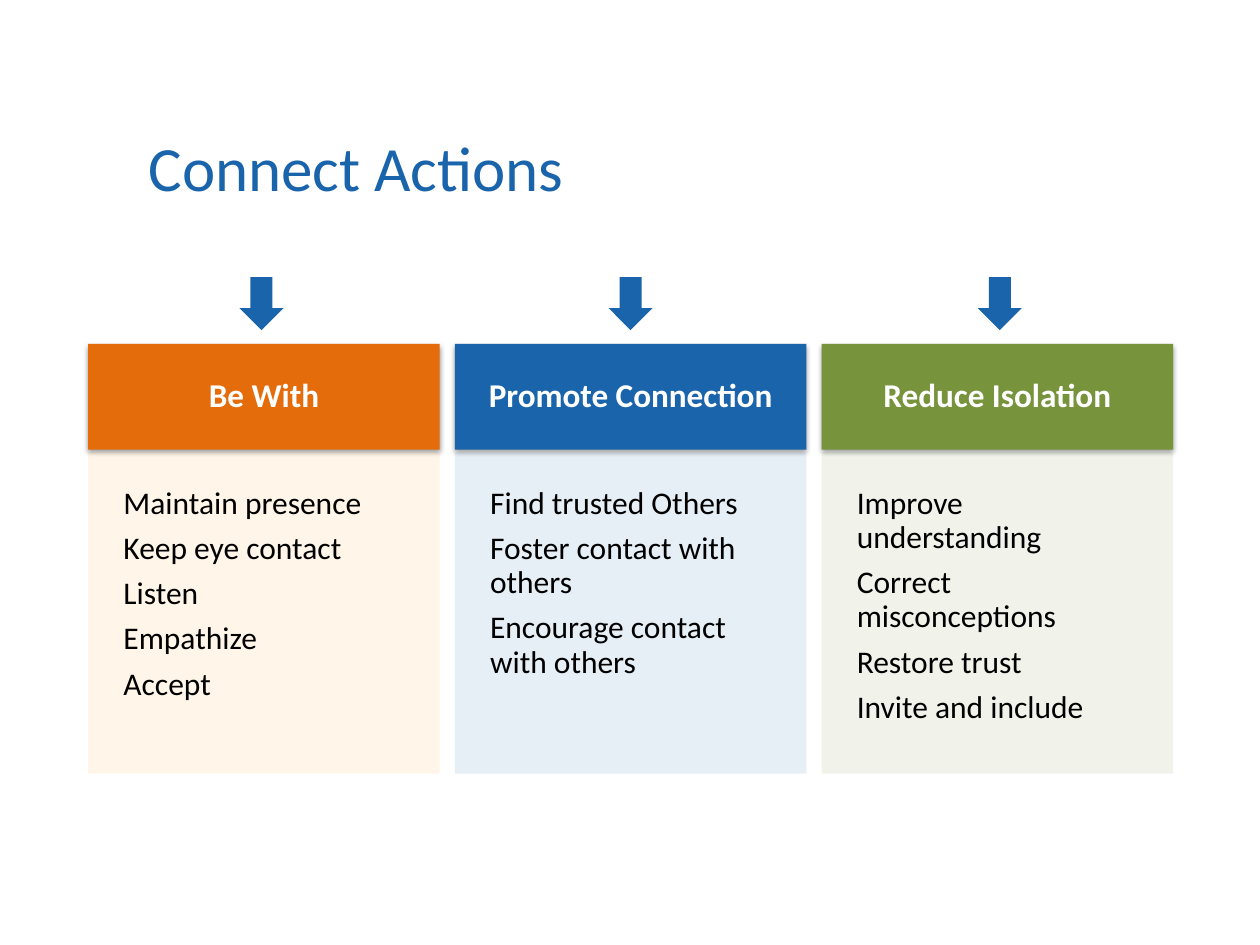
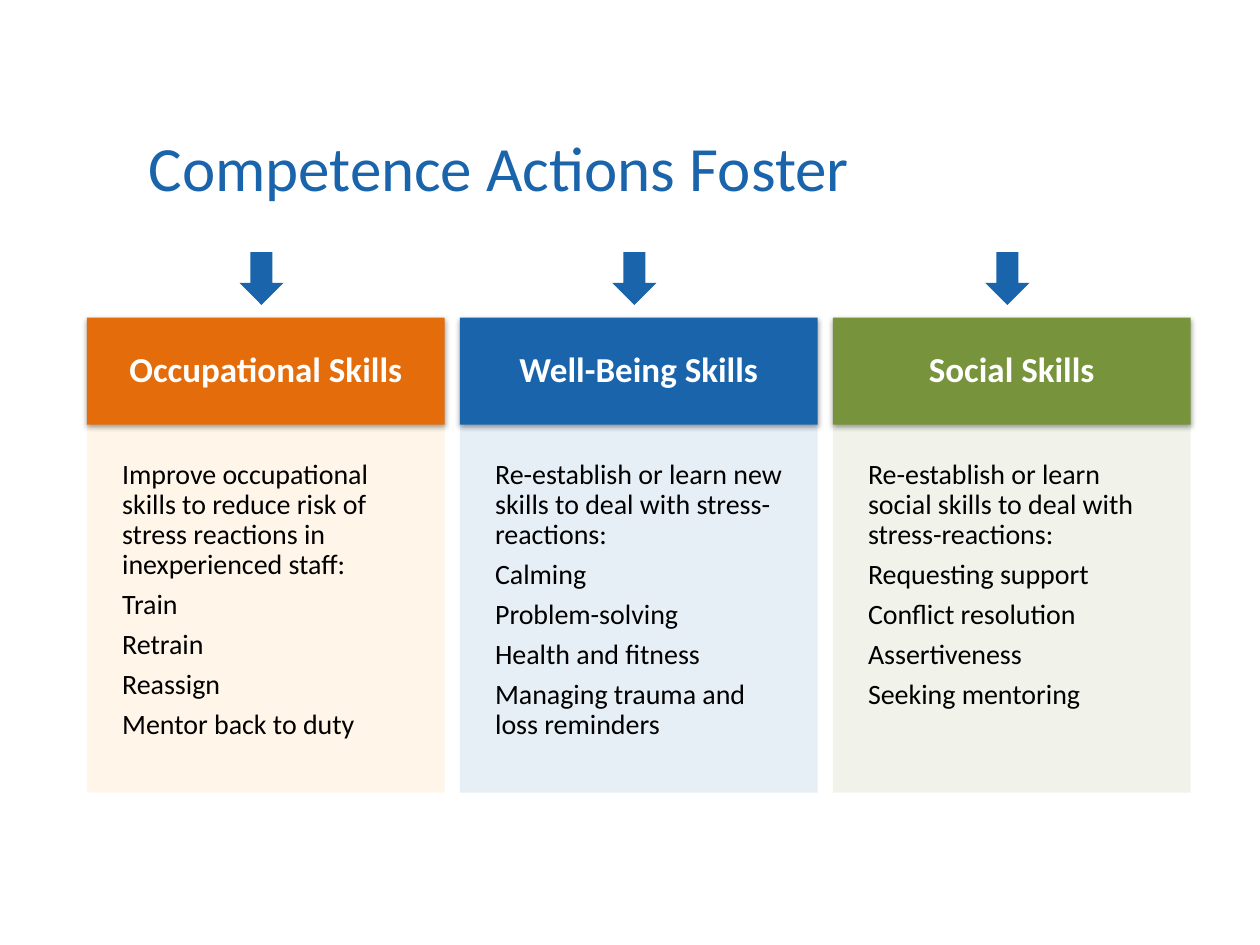
from dataclasses import dataclass

from lxml import etree
from pptx import Presentation
from pptx.dml.color import RGBColor
from pptx.enum.shapes import MSO_SHAPE as Shape
from pptx.enum.text import MSO_ANCHOR as Anchor, PP_ALIGN as Align
from pptx.oxml.ns import qn
from pptx.util import Inches, Pt

FONT = "Calibri"
BLUE, ORANGE, AMBER, GREEN = "1964AB", "E46C0A", "FFAE2D", "77933C"
WHITE, BLACK = "FFFFFF", "000000"
COLUMN_COLOURS = [(ORANGE, AMBER), (BLUE, BLUE), (GREEN, GREEN)]
COLUMN_GAP = 0.12
ARROW_LEFT, ARROW_WIDTH, ARROW_HEIGHT = 1.9, 0.35, 0.42


@dataclass
class ColumnLayout:
    """Measures of the three columns on one slide, in inches and points."""
    left: float
    width: float
    arrow_top: float
    arrow_pitch: float
    header_top: float
    header_height: float
    header_size: int
    body_top: float
    body_height: float
    body_size: int


CONNECT_LAYOUT = ColumnLayout(0.7, 2.79, 2.2, 2.93, 2.73, 0.84, 19, 3.59, 2.55, 18)
COMPETENCE_LAYOUT = ColumnLayout(0.69, 2.84, 2, 2.96, 2.52, 0.85, 20, 3.37, 2.92, 16)

CONNECT_COLUMNS = [
    ("Be With", ["Maintain presence", "Keep eye contact", "Listen", "Empathize", "Accept"]),
    ("Promote Connection", ["Find trusted Others", "Foster contact with others",
                            "Encourage contact with others"]),
    ("Reduce Isolation", ["Improve understanding", "Correct misconceptions",
                          "Restore trust", "Invite and include"]),
]
COMPETENCE_COLUMNS = [
    ("Occupational Skills", [
        "Improve occupational skills to reduce risk of stress reactions in inexperienced staff:",
        "Train", "Retrain", "Reassign", "Mentor back to duty"]),
    ("Well-Being Skills", [
        "Re-establish or learn new skills to deal with stress-reactions:",
        "Calming", "Problem-solving", "Health and fitness",
        "Managing trauma and loss reminders"]),
    ("Social Skills", [
        "Re-establish or learn social skills to deal with stress-reactions:",
        "Requesting support", "Conflict resolution", "Assertiveness", "Seeking mentoring"]),
]


def colour(value):
    """Turn a hex string into a colour."""
    return RGBColor.from_string(value)


def style_font(paragraph, size, text_colour, bold=False):
    """Format the runs of a paragraph."""
    for run in paragraph.runs:
        run.font.name = FONT
        run.font.size = Pt(size)
        run.font.bold = bold
        run.font.color.rgb = colour(text_colour)


def add_block(slide, kind, left, top, width, height, fill):
    """Add a filled shape without line or shadow."""
    shape = slide.shapes.add_shape(kind, Inches(left), Inches(top), Inches(width), Inches(height))
    shape.shadow.inherit = False
    shape.fill.solid()
    shape.fill.fore_color.rgb = colour(fill)
    shape.line.fill.background()
    return shape


def set_alpha(colour_element, percent):
    """Give a colour element an opacity."""
    etree.SubElement(colour_element, qn("a:alpha"), val=str(percent * 1000))


def add_drop_shadow(shape):
    """Add a soft shadow straight below a shape."""
    effects = shape._element.spPr.find(qn("a:effectLst"))
    shadow = etree.SubElement(effects, qn("a:outerShdw"), blurRad=str(Pt(3.1)),
                              dist=str(Pt(1.6)), dir="5400000", rotWithShape="0")
    set_alpha(etree.SubElement(shadow, qn("a:srgbClr"), val=BLACK), 38)


def set_text(shape, lines, size, text_colour, margin, anchor, align, bold=False):
    """Fill a shape with paragraphs spaced in proportion to their size."""
    frame = shape.text_frame
    frame.word_wrap = True
    frame.vertical_anchor = anchor
    frame.margin_left = frame.margin_right = Inches(margin)
    frame.margin_top = frame.margin_bottom = Inches(margin)
    frame.text = "\n".join(lines)
    for paragraph in frame.paragraphs:
        paragraph.alignment = align
        paragraph.line_spacing = 0.9
        style_font(paragraph, size, text_colour, bold)
    for paragraph in frame.paragraphs[:-1]:
        paragraph.space_after = Pt(0.35 * size)


def add_title(slide, text):
    """Add the slide title."""
    title = slide.shapes.add_textbox(Inches(1.08), Inches(0.22), Inches(7.42), Inches(1.45))
    frame = title.text_frame
    frame.word_wrap = True
    frame.vertical_anchor = Anchor.BOTTOM
    frame.text = text
    style_font(frame.paragraphs[0], 36, BLUE)


def add_header(slide, layout, left, text, fill):
    """Add the coloured heading of a column."""
    header = add_block(slide, Shape.RECTANGLE, left, layout.header_top,
                       layout.width, layout.header_height, fill)
    add_drop_shadow(header)
    set_text(header, [text], layout.header_size, WHITE, 0.22, Anchor.MIDDLE, Align.CENTER, True)


def add_body(slide, layout, left, lines, fill):
    """Add the pale panel with the actions of a column."""
    body = add_block(slide, Shape.RECTANGLE, left, layout.body_top,
                     layout.width, layout.body_height, fill)
    set_alpha(body._element.spPr.find(qn("a:solidFill"))[0], 10)
    set_text(body, lines, layout.body_size, BLACK, 0.28, Anchor.TOP, Align.LEFT)


def add_action_slide(presentation, title, layout, columns):
    """Add a slide with a title and three columns under arrows."""
    slide = presentation.slides.add_slide(presentation.slide_layouts[6])
    add_title(slide, title)
    for index, ((heading, lines), (header_fill, body_fill)) in enumerate(zip(columns, COLUMN_COLOURS)):
        left = layout.left + index * (layout.width + COLUMN_GAP)
        add_header(slide, layout, left, heading, header_fill)
        add_body(slide, layout, left, lines, body_fill)
        add_block(slide, Shape.DOWN_ARROW, ARROW_LEFT + index * layout.arrow_pitch,
                  layout.arrow_top, ARROW_WIDTH, ARROW_HEIGHT, BLUE)


def main():
    """Build and save the presentation."""
    presentation = Presentation()
    presentation.slide_width = Inches(10)
    presentation.slide_height = Inches(7.5)
    add_action_slide(presentation, "Connect Actions", CONNECT_LAYOUT, CONNECT_COLUMNS)
    add_action_slide(presentation, "Competence Actions Foster", COMPETENCE_LAYOUT, COMPETENCE_COLUMNS)
    presentation.save("out.pptx")


if __name__ == "__main__":
    main()
